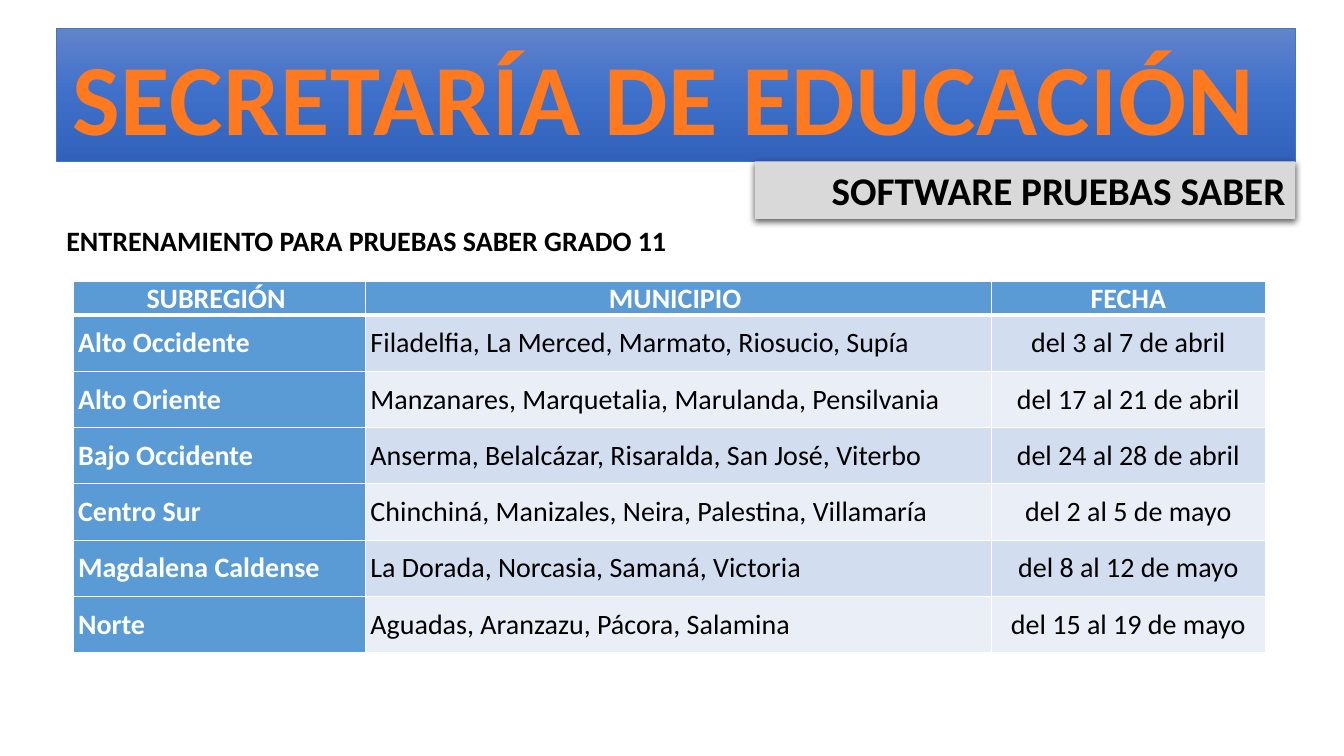
from copy import deepcopy

from lxml.etree import SubElement
from pptx import Presentation
from pptx.dml.color import RGBColor
from pptx.enum.shapes import MSO_SHAPE
from pptx.enum.text import MSO_ANCHOR, MSO_AUTO_SIZE, PP_ALIGN
from pptx.oxml.ns import qn
from pptx.util import Pt

FONT = "Calibri"
BLUE, WHITE, BLACK = "5B9BD5", "FFFFFF", "000000"
BANDS = ("D2DEEF", "EAEFF7")
COLUMN_WIDTHS = (208.8, 447.1, 195.8)
HEADER_HEIGHT, ROW_HEIGHT = 21, 40.2
SCHEDULE = [
    ("SUBREGIÓN ", "MUNICIPIO ", "FECHA"),
    ("Alto Occidente", "Filadelfia, La Merced, Marmato, Riosucio, Supía", "del 3 al 7 de abril"),
    ("Alto Oriente", "Manzanares, Marquetalia, Marulanda, Pensilvania", "del 17 al 21 de abril"),
    ("Bajo Occidente", "Anserma, Belalcázar, Risaralda, San José, Viterbo", "del 24 al 28 de abril"),
    ("Centro Sur", "Chinchiná, Manizales, Neira, Palestina, Villamaría", "del 2 al 5 de mayo"),
    ("Magdalena Caldense", "La Dorada, Norcasia, Samaná, Victoria", "del 8 al 12 de mayo"),
    ("Norte", "Aguadas, Aranzazu, Pácora, Salamina", "del 15 al 19 de mayo"),
]


def rgb(color):
    return RGBColor.from_string(color)


def write(frame, text, size, color, bold=True, align=PP_ALIGN.LEFT):
    frame.text = text
    paragraph = frame.paragraphs[0]
    paragraph.alignment = align
    paragraph.line_spacing = 1.0
    font = paragraph.runs[0].font
    font.name, font.size, font.bold = FONT, Pt(size), bold
    font.color.rgb = rgb(color)


def place(shape, left, top, width, height):
    shape.left, shape.top = Pt(left), Pt(top)
    shape.width, shape.height = Pt(width), Pt(height)


def fill_gradient(shape, colors):
    """Fill from top to bottom with three evenly spaced colours."""
    shape.fill.gradient()
    shape.fill.gradient_angle = 270
    stops = shape.element.spPr.find(".//" + qn("a:gsLst"))
    stops.insert(1, deepcopy(stops[0]))
    for index, (stop, color) in enumerate(zip(shape.fill.gradient_stops, colors)):
        stop.position = index / 2
        stop.color.rgb = rgb(color)


def add_shadow(shape):
    shape.shadow.inherit = False
    effects = shape.element.spPr.find(qn("a:effectLst"))
    shadow = SubElement(effects, qn("a:outerShdw"), blurRad=str(Pt(4.5)),
                        dist=str(Pt(1.5)), dir="5400000", algn="t", rotWithShape="0")
    color = SubElement(shadow, qn("a:srgbClr"), val=BLACK)
    SubElement(color, qn("a:alpha"), val="63000")


def add_banner(slide):
    banner = slide.shapes.title
    place(banner, 40.3, 20.6, 884.9, 94.5)
    fill_gradient(banner, ("6183CB", "3E70CA", "3062BB"))
    banner.line.color.rgb = rgb("4472C4")
    banner.line.width = Pt(0.5)
    frame = banner.text_frame
    write(frame, "SECRETARÍA DE EDUCACIÓN ", 72, "FF7A1F", align=PP_ALIGN.CENTER)
    frame.paragraphs[0].runs[0].font._element.set("spc", "50")
    frame.auto_size = MSO_AUTO_SIZE.NONE
    frame.word_wrap = False


def add_subtitle(slide):
    subtitle = slide.shapes.add_shape(
        MSO_SHAPE.RECTANGLE, Pt(539.3), Pt(115.2), Pt(385.9), Pt(41.2))
    subtitle.fill.solid()
    subtitle.fill.fore_color.rgb = rgb("D9D9D9")
    subtitle.line.fill.background()
    add_shadow(subtitle)
    write(subtitle.text_frame, "SOFTWARE PRUEBAS SABER", 28, BLACK, align=PP_ALIGN.RIGHT)


def add_heading(slide):
    heading = slide.shapes.add_textbox(Pt(40.3), Pt(156.4), Pt(472.3), Pt(31.5))
    heading.text_frame.word_wrap = True
    write(heading.text_frame, "ENTRENAMIENTO PARA PRUEBAS SABER GRADO 11", 20, BLACK)


def add_borders(cell, top, bottom):
    properties = cell._tc.get_or_add_tcPr()
    for side, width in (("L", 1), ("R", 1), ("T", top), ("B", bottom)):
        line = SubElement(properties, qn(f"a:ln{side}"), w=str(Pt(width)))
        SubElement(SubElement(line, qn("a:solidFill")), qn("a:srgbClr"), val=WHITE)


def format_cell(cell, row, column, text):
    is_label = row == 0 or column == 0
    centred = row == 0 or column == 2
    add_borders(cell, 3 if row == 1 else 1, 3 if row == 0 else 1)
    cell.fill.solid()
    cell.fill.fore_color.rgb = rgb(BLUE if is_label else BANDS[(row - 1) % 2])
    cell.margin_left = cell.margin_right = Pt(3.6)
    cell.margin_top = cell.margin_bottom = Pt(0)
    cell.vertical_anchor = MSO_ANCHOR.MIDDLE
    write(cell.text_frame, text, 20, WHITE if is_label else BLACK, is_label,
          PP_ALIGN.CENTER if centred else PP_ALIGN.LEFT)


def add_schedule(slide):
    height = HEADER_HEIGHT + ROW_HEIGHT * (len(SCHEDULE) - 1)
    table = slide.shapes.add_table(
        len(SCHEDULE), len(COLUMN_WIDTHS), Pt(52.2), Pt(201),
        Pt(sum(COLUMN_WIDTHS)), Pt(height)).table
    for column, width in zip(table.columns, COLUMN_WIDTHS):
        column.width = Pt(width)
    for row, texts in enumerate(SCHEDULE):
        table.rows[row].height = Pt(ROW_HEIGHT if row else HEADER_HEIGHT)
        for column, text in enumerate(texts):
            format_cell(table.cell(row, column), row, column, text)


def main():
    presentation = Presentation()
    presentation.slide_width, presentation.slide_height = Pt(960), Pt(540)
    slide = presentation.slides.add_slide(presentation.slide_layouts[5])
    add_banner(slide)
    add_subtitle(slide)
    add_heading(slide)
    add_schedule(slide)
    presentation.save("out.pptx")


if __name__ == "__main__":
    main()
